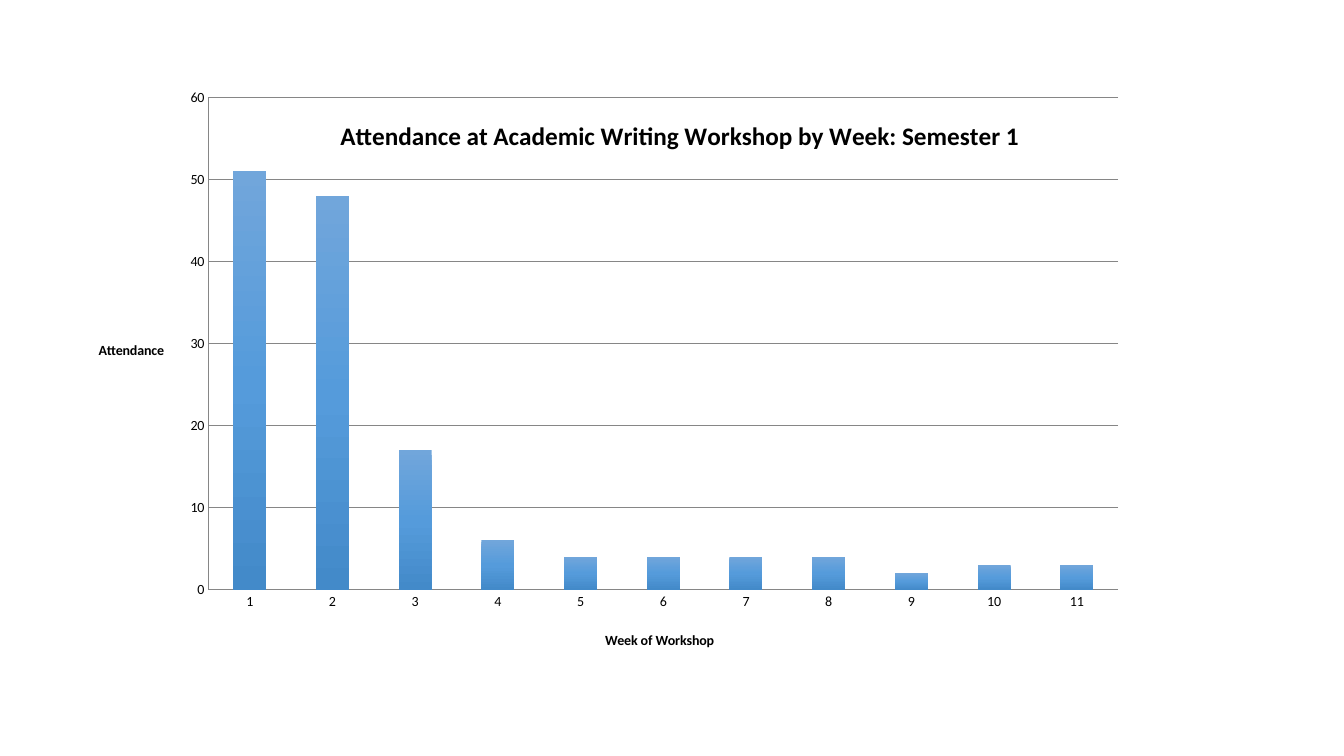
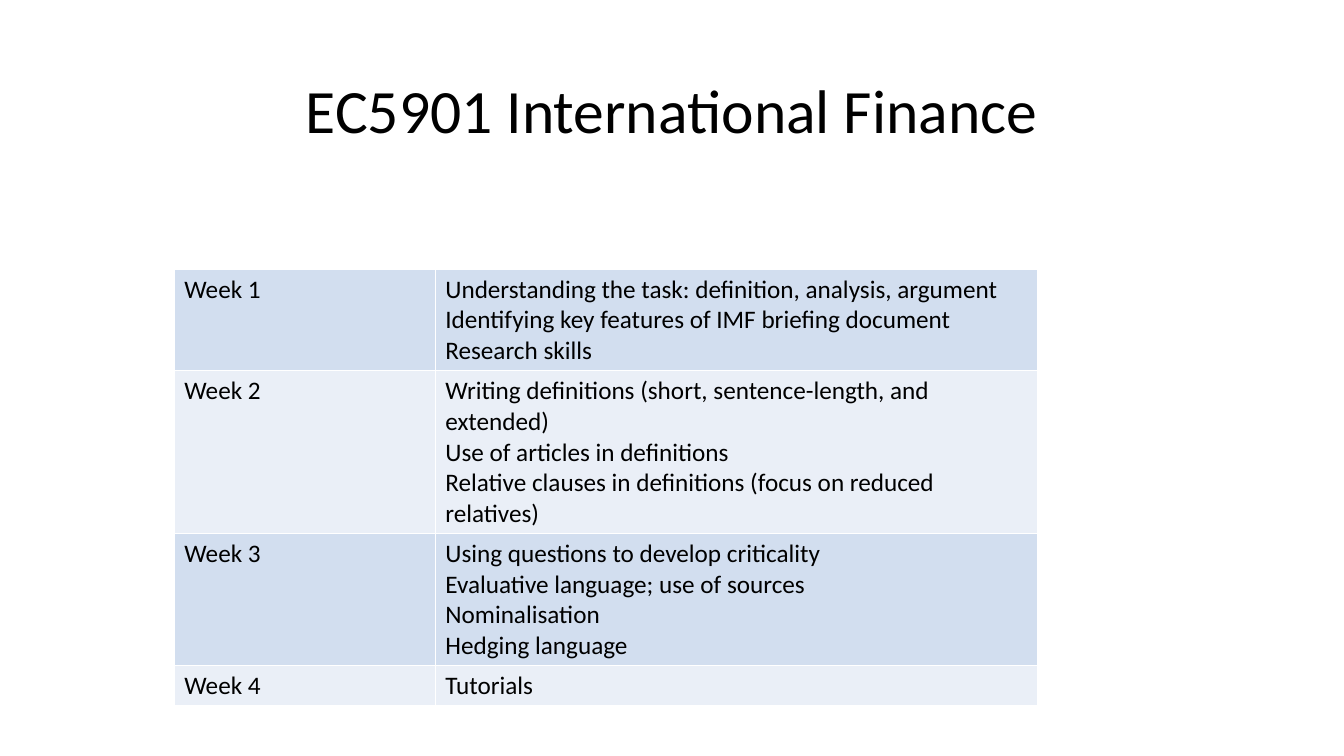
from dataclasses import dataclass
from lxml import etree
from pptx import Presentation
from pptx.chart.data import CategoryChartData
from pptx.dml.color import RGBColor
from pptx.enum.chart import XL_CHART_TYPE, XL_TICK_MARK
from pptx.enum.text import MSO_ANCHOR, PP_ALIGN
from pptx.oxml.ns import qn
from pptx.util import Cm, Pt

COLUMN = XL_CHART_TYPE.COLUMN_CLUSTERED
NO_TICK = XL_TICK_MARK.NONE
MIDDLE = MSO_ANCHOR.MIDDLE
CENTER = PP_ALIGN.CENTER


@dataclass(frozen=True)
class Theme:
    face: str = "Calibri"
    ink: str = "000000"
    rule: str = "868686"
    edge: str = "FFFFFF"
    bands: tuple = ("D2DEEF", "EAEFF7")
    bar: tuple = ((0, "71A6DB"), (50, "559BDB"), (100, "438AC9"))
    title: int = 44
    head: int = 18
    body: int = 18
    label: int = 10


THEME = Theme()

CHART = {
    "box": (2.33, 2.26, 29.21, 14.91),
    "plot": (0.1, 0.012, 0.785, 0.833),
    "title": ("Attendance at Academic Writing Workshop by Week: Semester 1", 0.21, 0.04),
    "week": ("Week of Workshop", 0.44, 0.91),
    "count": ("Attendance", 0.003, 0.42),
    "values": (51, 48, 17, 6, 4, 4, 4, 4, 2, 3, 3),
}

TITLE = "EC5901 International Finance"
TITLE_BOX = (2.33, 1.02, 29.21, 3.68)
PLAN = [
    ("Week 1", 3, ["Understanding the task: definition, analysis, argument",
                   "Identifying key features of IMF briefing document",
                   "Research skills"]),
    ("Week 2", 5, ["Writing definitions (short, sentence-length, and extended)",
                   "Use of articles in definitions",
                   "Relative clauses in definitions (focus on reduced relatives)"]),
    ("Week 3", 4, ["Using questions to develop criticality",
                   "Evaluative language; use of sources",
                   "Nominalisation",
                   "Hedging language"]),
    ("Week 4", 1, ["Tutorials"]),
]
PLAN_AT = (4.39, 6.78)
COLS = (6.58, 15.19)
ROW, LINE = 1.02, 0.77


def style(font, size, bold=False):
    font.name = THEME.face
    font.size = Pt(size)
    font.bold = bold
    font.color.rgb = RGBColor.from_string(THEME.ink)


def place(parent, index, inner=False, **spots):
    for old in parent.findall(qn("c:layout")):
        parent.remove(old)
    layout = etree.Element(qn("c:layout"))
    manual = etree.SubElement(layout, qn("c:manualLayout"))
    if inner:
        etree.SubElement(manual, qn("c:layoutTarget"), val="inner")
    for key in ("x", "y"):
        etree.SubElement(manual, qn(f"c:{key}Mode"), val="edge")
    for key, value in spots.items():
        etree.SubElement(manual, qn(f"c:{key}"), val=str(value))
    parent.insert(index, layout)


def caption(title, item, size):
    text, x, y = item
    frame = title.text_frame
    frame.text = text
    style(frame.paragraphs[0].font, size, True)
    body = next(title.element.iter(qn("a:bodyPr")))
    body.set("rot", "0")
    body.set("vert", "horz")
    place(title.element, 1, x=x, y=y)


def shade(chart, series):
    fill = series.format.fill
    fill.gradient()
    fill.gradient_angle = 270
    stops = next(chart.element.iter(qn("a:gsLst")))
    for stop in list(stops):
        stops.remove(stop)
    for spot, color in THEME.bar:
        stop = etree.SubElement(stops, qn("a:gs"), pos=str(spot * 1000))
        etree.SubElement(stop, qn("a:srgbClr"), val=color)


def add_attendance(slide):
    values = CHART["values"]
    data = CategoryChartData()
    data.categories = [str(n) for n in range(1, len(values) + 1)]
    data.add_series("Series 1", values)
    chart = slide.shapes.add_chart(COLUMN, *map(Cm, CHART["box"]), data).chart
    style(chart.font, THEME.label)
    chart.has_legend = False
    caption(chart.chart_title, CHART["title"], THEME.head)
    chart.chart_title.include_in_layout = True
    next(chart.chart_title.element.iter(qn("c:overlay"))).set("val", "1")
    x, y, w, h = CHART["plot"]
    place(next(chart.element.iter(qn("c:plotArea"))), 0, True, x=x, y=y, w=w, h=h)

    week, count = chart.category_axis, chart.value_axis
    count.minimum_scale, count.maximum_scale, count.major_unit = 0, 60, 10
    count.has_major_gridlines = True
    for axis, key in ((week, "week"), (count, "count")):
        axis.major_tick_mark = axis.minor_tick_mark = NO_TICK
        caption(axis.axis_title, CHART[key], THEME.label)
    for part in (week, count, count.major_gridlines):
        part.format.line.color.rgb = RGBColor.from_string(THEME.rule)
        part.format.line.width = Pt(0.75)

    plot = chart.plots[0]
    plot.gap_width = 150
    plot.vary_by_categories = False
    shade(chart, plot.series[0])


def add_title(slide, text):
    frame = slide.shapes.add_textbox(*map(Cm, TITLE_BOX)).text_frame
    frame.word_wrap = True
    frame.vertical_anchor = MIDDLE
    frame.text = text
    para = frame.paragraphs[0]
    para.alignment = CENTER
    para.line_spacing = 0.9
    style(para.font, THEME.title)


def border(cell):
    props = cell._tc.get_or_add_tcPr()
    for index, side in enumerate(("lnL", "lnR", "lnT", "lnB")):
        line = etree.Element(qn(f"a:{side}"), w=str(Pt(1)))
        fill = etree.SubElement(line, qn("a:solidFill"))
        etree.SubElement(fill, qn("a:srgbClr"), val=THEME.edge)
        props.insert(index, line)


def add_plan(slide):
    heights = [ROW + LINE * (lines - 1) for _, lines, _ in PLAN]
    size = (sum(COLS), sum(heights))
    table = slide.shapes.add_table(len(PLAN), len(COLS), *map(Cm, PLAN_AT + size)).table
    table.first_row = False
    for column, width in zip(table.columns, COLS):
        column.width = Cm(width)
    for r, (week, _, topics) in enumerate(PLAN):
        table.rows[r].height = Cm(heights[r])
        for c, lines in enumerate(([week], topics)):
            cell = table.cell(r, c)
            cell.text = "\n".join(lines)
            cell.fill.solid()
            cell.fill.fore_color.rgb = RGBColor.from_string(THEME.bands[r % 2])
            border(cell)
            for para in cell.text_frame.paragraphs:
                style(para.font, THEME.body)


def main():
    deck = Presentation()
    deck.slide_width, deck.slide_height = Cm(33.87), Cm(19.05)
    blank = deck.slide_layouts[6]
    add_attendance(deck.slides.add_slide(blank))
    slide = deck.slides.add_slide(blank)
    add_title(slide, TITLE)
    add_plan(slide)
    deck.save("out.pptx")


if __name__ == "__main__":
    main()
